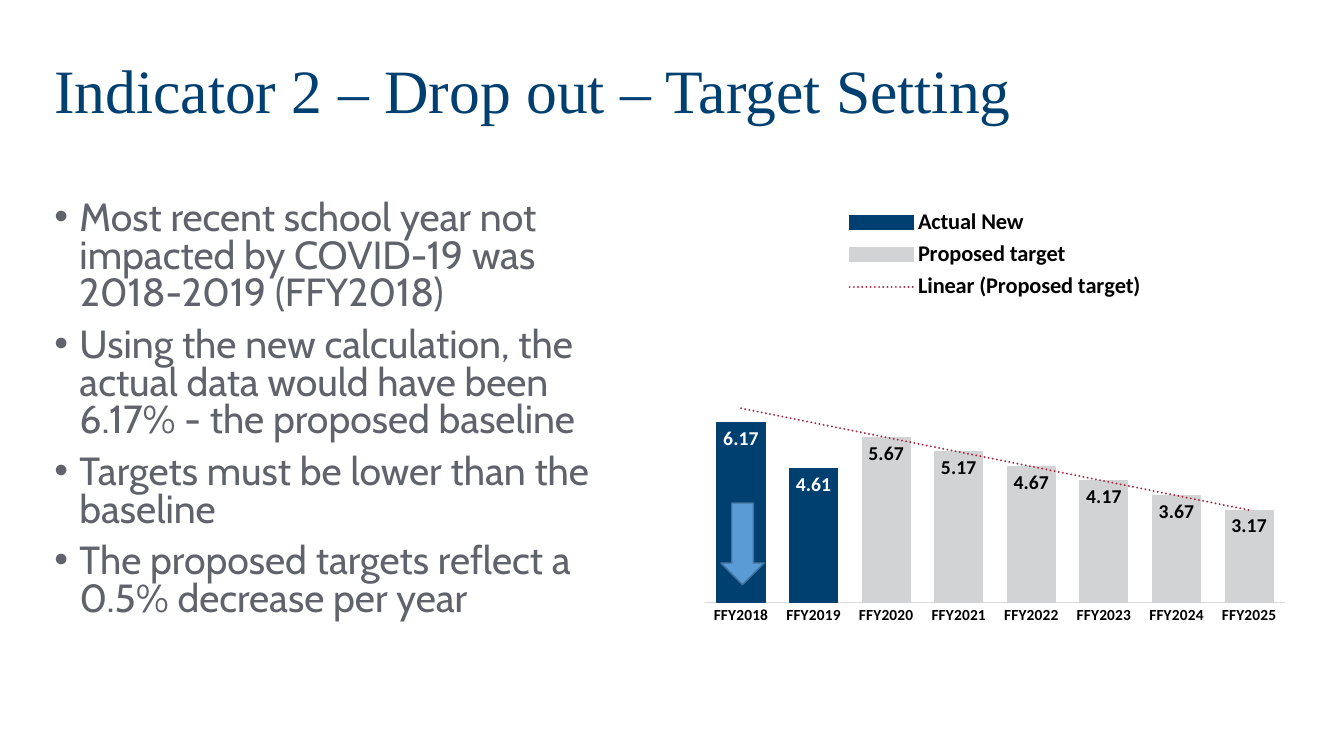
from lxml import etree
from pptx import Presentation
from pptx.chart import data as cd
from pptx.dml.color import RGBColor
from pptx.enum import chart as ch, shapes, text
from pptx.oxml import parse_xml
from pptx.oxml.ns import nsdecls, qn
from pptx.util import Inches, Pt

NAVY, GREY, BLACK = "004071", "D1D3D4", "000000"


def rgb(code):
    return RGBColor.from_string(code)


def style(font, name, size, color, bold=False):
    font.name, font.size, font.bold = name, Pt(size), bold
    font.color.rgb = rgb(color)


prs = Presentation()
prs.slide_width, prs.slide_height = Inches(13.33), Inches(7.5)
slide = prs.slides.add_slide(prs.slide_layouts[6])

# Title
box = slide.shapes.add_textbox(Inches(0.44), Inches(0.16), Inches(12.43), Inches(1.53))
frame = box.text_frame
frame.word_wrap = True
frame.vertical_anchor = text.MSO_ANCHOR.MIDDLE
para = frame.paragraphs[0]
para.line_spacing = 0.9
run = para.add_run()
run.text = "Indicator 2 – Drop out – Target Setting"
style(run.font, "Times New Roman", 44, NAVY)

# Bullet list
points = [
    "Most recent school year not impacted by COVID-19 was 2018-2019 (FFY2018)",
    "Using the new calculation, the actual data would have been 6.17% - the proposed baseline",
    "Targets must be lower than the baseline",
    "The proposed targets reflect a 0.5% decrease per year",
]
box = slide.shapes.add_textbox(Inches(0.44), Inches(1.95), Inches(6), Inches(4.34))
frame = box.text_frame
frame.word_wrap = True
for i, point in enumerate(points):
    para = frame.paragraphs[0] if i == 0 else frame.add_paragraph()
    props = para._p.get_or_add_pPr()
    props.set("marL", str(Inches(0.25)))
    props.set("indent", str(-Inches(0.25)))
    etree.SubElement(props, qn("a:buFont")).set("typeface", "Arial")
    etree.SubElement(props, qn("a:buChar")).set("char", "•")
    para.line_spacing = 0.8
    if i:
        para.space_before = Pt(10)
    run = para.add_run()
    run.text = point
    style(run.font, "Cabin", 28, "60636B")

# Column chart
data = cd.CategoryChartData()
data.categories = [f"FFY{year}" for year in range(2018, 2026)]
data.add_series("Actual New", [6.17, 4.61] + [None] * 6)
data.add_series("Proposed target", [None] * 2 + [5.67, 5.17, 4.67, 4.17, 3.67, 3.17])
chart = slide.shapes.add_chart(
    ch.XL_CHART_TYPE.COLUMN_CLUSTERED,
    Inches(6.87), Inches(1.94), Inches(6), Inches(4.34), data).chart
chart.has_title = False
style(chart.font, "Calibri", 10, BLACK)

# Axes
axis = chart.category_axis
axis.major_tick_mark = ch.XL_TICK_MARK.NONE
style(axis.tick_labels.font, "Calibri", 11, BLACK, True)
axis.format.line.color.rgb = rgb("D9D9D9")
axis.format.line.width = Pt(0.75)
scale = chart.value_axis
scale.minimum_scale, scale.maximum_scale = 0, 10
scale.has_major_gridlines = False
scale.visible = False

# Bars and labels
plot = chart.plots[0]
plot.gap_width, plot.overlap, plot.vary_by_categories = 51, 100, False
for bars, color, ink in zip(plot.series, (NAVY, GREY), ("FFFFFF", BLACK)):
    bars.format.fill.solid()
    bars.format.fill.fore_color.rgb = rgb(color)
    bars.format.line.color.rgb = rgb(color)
    bars.format.line.width = Pt(0.75)
    labels = bars.data_labels
    labels.show_value = True
    labels.position = ch.XL_LABEL_POSITION.INSIDE_END
    style(labels.font, "Calibri", 14, ink, True)

# Trend line of the proposed targets
trend = parse_xml(
    f'<c:trendline {nsdecls("c", "a")}><c:spPr><a:ln w="{Pt(1.5)}" cap="rnd">'
    '<a:solidFill><a:srgbClr val="A7253F"/></a:solidFill><a:prstDash val="sysDot"/>'
    '</a:ln></c:spPr><c:trendlineType val="linear"/><c:dispRSqr val="0"/>'
    '<c:dispEq val="0"/></c:trendline>')
plot.series[1]._element.find(qn("c:cat")).addprevious(trend)

# Legend
chart.has_legend = True
legend = chart.legend
legend.position = ch.XL_LEGEND_POSITION.TOP
legend.include_in_layout = False
style(legend.font, "Calibri", 16, BLACK, True)

# Places of plot and legend, as shares of the chart
area = chart._chartSpace.chart.plotArea
spots = [
    (area, '<c:layoutTarget val="inner"/>', (0.02, 0.265, 0.96, 0.665)),
    (legend._element, "", (0.25, 0.02, 0.5, 0.23)),
]
for part, target, place in spots:
    for old in part.findall(qn("c:layout")):
        part.remove(old)
    marks = '<c:xMode val="edge"/><c:yMode val="edge"/>' + "".join(
        f'<c:{key} val="{val}"/>' for key, val in zip("xywh", place))
    layout = parse_xml(f'<c:layout {nsdecls("c")}><c:manualLayout>{target}{marks}'
                       '</c:manualLayout></c:layout>')
    if part is area:
        part.insert(0, layout)
    else:
        part.find(qn("c:legendPos")).addnext(layout)

# Arrow pointing down
arrow = slide.shapes.add_shape(
    shapes.MSO_SHAPE.UP_ARROW, Inches(7.15), Inches(4.99), Inches(0.43), Inches(0.81))
arrow.rotation = 180
arrow.shadow.inherit = False
arrow.fill.solid()
arrow.fill.fore_color.rgb = rgb("5B9BD5")
arrow.line.color.rgb = rgb("43739E")
arrow.line.width = Pt(1)

prs.save("out.pptx")
